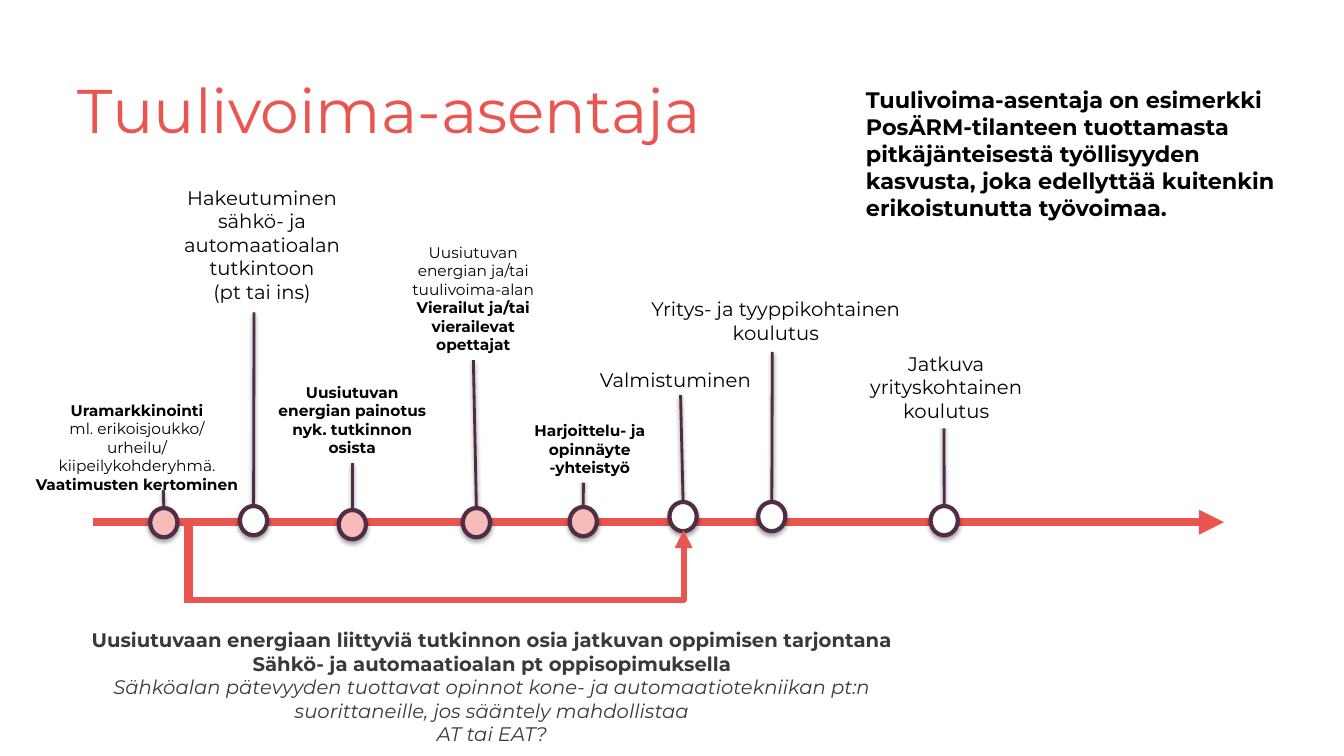
from lxml import etree
from pptx import Presentation
from pptx.dml.color import RGBColor
from pptx.enum.shapes import MSO_CONNECTOR, MSO_SHAPE
from pptx.enum.text import MSO_ANCHOR, MSO_AUTO_SIZE, PP_ALIGN
from pptx.oxml.ns import qn
from pptx.util import Inches, Pt

STRAIGHT, ELBOW = MSO_CONNECTOR.STRAIGHT, MSO_CONNECTOR.ELBOW
OVAL = MSO_SHAPE.OVAL
LEFT, CENTER = PP_ALIGN.LEFT, PP_ALIGN.CENTER
MIDDLE = MSO_ANCHOR.MIDDLE
FIT_SHAPE, NO_FIT = MSO_AUTO_SIZE.SHAPE_TO_FIT_TEXT, MSO_AUTO_SIZE.NONE
TOP_SITE, BOTTOM_SITE = 0, 2

COLORS = {"coral": "EA564F", "plum": "4F2D45", "pink": "F7BBB9",
          "white": "FFFFFF", "black": "000000", "gray": "3B3838"}
FONT = "Montserrat"
MARKER_WIDTH, MARKER_HEIGHT = 0.27, 0.29


def color(name):
    return RGBColor.from_string(COLORS[name])


def add_text(para, text, size=14, ink="black", bold=False, italic=False):
    """Add text to a paragraph; each newline becomes a line break."""
    for index, line in enumerate(text.split("\n")):
        if index:
            para.add_line_break()
        if line:
            span = para.add_run()
            span.text = line
            span.font.name = FONT
            span.font.size = Pt(size)
            span.font.bold = bold
            span.font.italic = italic
            span.font.color.rgb = color(ink)


class TimelinePage:
    def __init__(self, deck):
        self.page = deck.slides.add_slide(deck.slide_layouts[5])
        self.shapes = self.page.shapes

    def effects(self, shape, shadow=None):
        """Set an empty effect list, or a downward shadow (alpha %, distance pt)."""
        effect_list = etree.SubElement(shape._element.spPr, qn("a:effectLst"))
        if shadow:
            alpha, distance = shadow
            outer = etree.SubElement(effect_list, qn("a:outerShdw"),
                                     blurRad=str(Pt(3.1)), dist=str(Pt(distance)),
                                     dir="5400000", rotWithShape="0")
            ink = etree.SubElement(outer, qn("a:srgbClr"), val=COLORS["black"])
            etree.SubElement(ink, qn("a:alpha"), val=str(alpha * 1000))

    def title(self, text, area):
        box = self.shapes.title
        box.left, box.top, box.width, box.height = map(Inches, area)
        frame = box.text_frame
        frame.auto_size = NO_FIT
        frame.vertical_anchor = MIDDLE
        para = frame.paragraphs[0]
        para.alignment = LEFT
        para.line_spacing = 0.9
        add_text(para, text, size=44, ink="coral")

    def text_box(self, paras, area, align=CENTER, wrap=True, filled=False):
        """Each paragraph is a list of (text, format) pairs."""
        box = self.shapes.add_textbox(*map(Inches, area))
        if filled:
            box.fill.solid()
            box.fill.fore_color.rgb = color("white")
        frame = box.text_frame
        frame.word_wrap = wrap
        frame.auto_size = FIT_SHAPE
        for index, spans in enumerate(paras):
            para = frame.add_paragraph() if index else frame.paragraphs[0]
            para.alignment = align
            for text, style in spans:
                add_text(para, text, **style)
        return box

    def line(self, start, end, ink, width, kind=STRAIGHT, arrow=False, shadow=None):
        line = self.shapes.add_connector(kind, *map(Inches, start + end))
        line.line.color.rgb = color(ink)
        line.line.width = Pt(width)
        if arrow:
            etree.SubElement(line.line._get_or_add_ln(), qn("a:tailEnd"), type="triangle")
        if kind == ELBOW:  # a single corner
            line._element.spPr.find(qn("a:prstGeom")).set("prst", "bentConnector2")
        self.effects(line, shadow)
        return line

    def marker(self, left, top, fill):
        marker = self.shapes.add_shape(OVAL, *map(Inches, (left, top, MARKER_WIDTH, MARKER_HEIGHT)))
        marker.fill.solid()
        marker.fill.fore_color.rgb = color(fill)
        marker.line.color.rgb = color("plum")
        marker.line.width = Pt(3)
        self.effects(marker, (35, 1.8))
        return marker

    def event(self, paras, area, marker_at, fill, stem_from=None, **box_style):
        """Marker, stem and label; without stem_from the stem starts at the label."""
        left, top = marker_at
        start = stem_from or (area[0] + area[2] / 2, area[1] + area[3])
        stem = self.line(start, (left + MARKER_WIDTH / 2, top), "plum", 2, shadow=(38, 1.6))
        stem.end_connect(self.marker(left, top, fill), TOP_SITE)
        label = self.text_box(paras, area, **box_style)
        if not stem_from:
            stem.begin_connect(label, BOTTOM_SITE)


NORMAL = {"size": 14}
SMALL = {"size": 11}
SMALL_BOLD = {"size": 11, "bold": True}
NOTE_BOLD = {"ink": "gray", "bold": True}
NOTE_ITALIC = {"ink": "gray", "italic": True}

# Events from left to right
EVENTS = [
    dict(paras=[[("Uramarkkinointi\n", SMALL_BOLD),
                 ("ml. erikoisjoukko/\nurheilu/\nkiipeilykohderyhmä.\n", SMALL),
                 ("Vaatimusten kertominen", SMALL_BOLD)]],
         area=(-0.26, 3.93, 3.24, 1.03), marker_at=(1.49, 5.04), fill="pink",
         stem_from=(1.62, 4.86)),
    dict(paras=[[("Hakeutuminen sähkö- ja automaatioalan tutkintoon\n(pt tai ins)", NORMAL)]],
         area=(1.62, 1.79, 1.96, 1.28), marker_at=(2.38, 5.02), fill="white",
         stem_from=(2.52, 3.1)),
    dict(paras=[[("Uusiutuvan energian painotus nyk. tutkinnon osista", SMALL_BOLD)]],
         area=(2.63, 3.75, 1.73, 0.84), marker_at=(3.36, 5.06), fill="pink", filled=True),
    dict(paras=[[("Uusiutuvan energian ja/tai tuulivoima-alan", SMALL)],
                [("Vierailut ja/tai vierailevat opettajat", SMALL_BOLD)]],
         area=(3.83, 2.36, 1.73, 1.21), marker_at=(4.59, 5.04), fill="pink", filled=True),
    dict(paras=[[("Harjoittelu- ja opinnäyte\n-yhteistyö", SMALL_BOLD)]],
         area=(4.87, 4.13, 1.96, 0.66), marker_at=(5.65, 5.03), fill="pink",
         stem_from=(5.79, 4.31), filled=True),
    dict(paras=[[("Valmistuminen", NORMAL)]],
         area=(5.81, 3.6, 1.78, 0.34), marker_at=(6.64, 4.98), fill="white",
         stem_from=(6.75, 3.92), wrap=False),
    dict(paras=[[("Yritys- ja tyyppikohtainen\nkoulutus", NORMAL)]],
         area=(6.34, 2.9, 2.71, 0.57), marker_at=(7.52, 4.98), fill="white",
         stem_from=(7.66, 3.49), wrap=False, filled=True),
    dict(paras=[[("Jatkuva\nyrityskohtainen\nkoulutus", NORMAL)]],
         area=(8.52, 3.44, 1.73, 0.81), marker_at=(9.23, 5.02), fill="white",
         stem_from=(9.36, 3.53), wrap=False, filled=True),
]


def main():
    deck = Presentation()
    deck.slide_width, deck.slide_height = Inches(13.33), Inches(7.5)
    page = TimelinePage(deck)

    # Title and introduction
    page.title("Tuulivoima-asentaja", (0.67, 0.4, 12.57, 1.45))
    page.text_box([[("Tuulivoima-asentaja on esimerkki PosÄRM-tilanteen tuottamasta "
                     "pitkäjänteisestä työllisyyden kasvusta, joka edellyttää kuitenkin "
                     "erikoistunutta työvoimaa.", {"size": 16, "bold": True})]],
                  (8.49, 0.81, 4.41, 1.45), align=LEFT)

    # Time axis and its events
    page.line((0.92, 5.18), (12.14, 5.18), "coral", 6, arrow=True)
    for event in EVENTS:
        page.event(**event)

    # Side path below the axis
    page.line((1.87, 5.16), (1.87, 5.98), "coral", 6)
    page.line((1.87, 5.95), (6.78, 5.26), "coral", 4.25, kind=ELBOW, arrow=True)
    page.text_box([
        [("Uusiutuvaan energiaan liittyviä tutkinnon osia jatkuvan oppimisen tarjontana", NOTE_BOLD)],
        [("Sähkö- ja automaatioalan pt oppisopimuksella", NOTE_BOLD)],
        [("Sähköalan pätevyyden tuottavat opinnot kone- ja automaatiotekniikan pt:n "
          "suorittaneille, jos sääntely mahdollistaa", NOTE_ITALIC)],
        [("AT tai EAT?", NOTE_ITALIC)],
    ], (0.4, 6.18, 8.96, 1.28), filled=True)

    deck.save("out.pptx")


if __name__ == "__main__":
    main()
